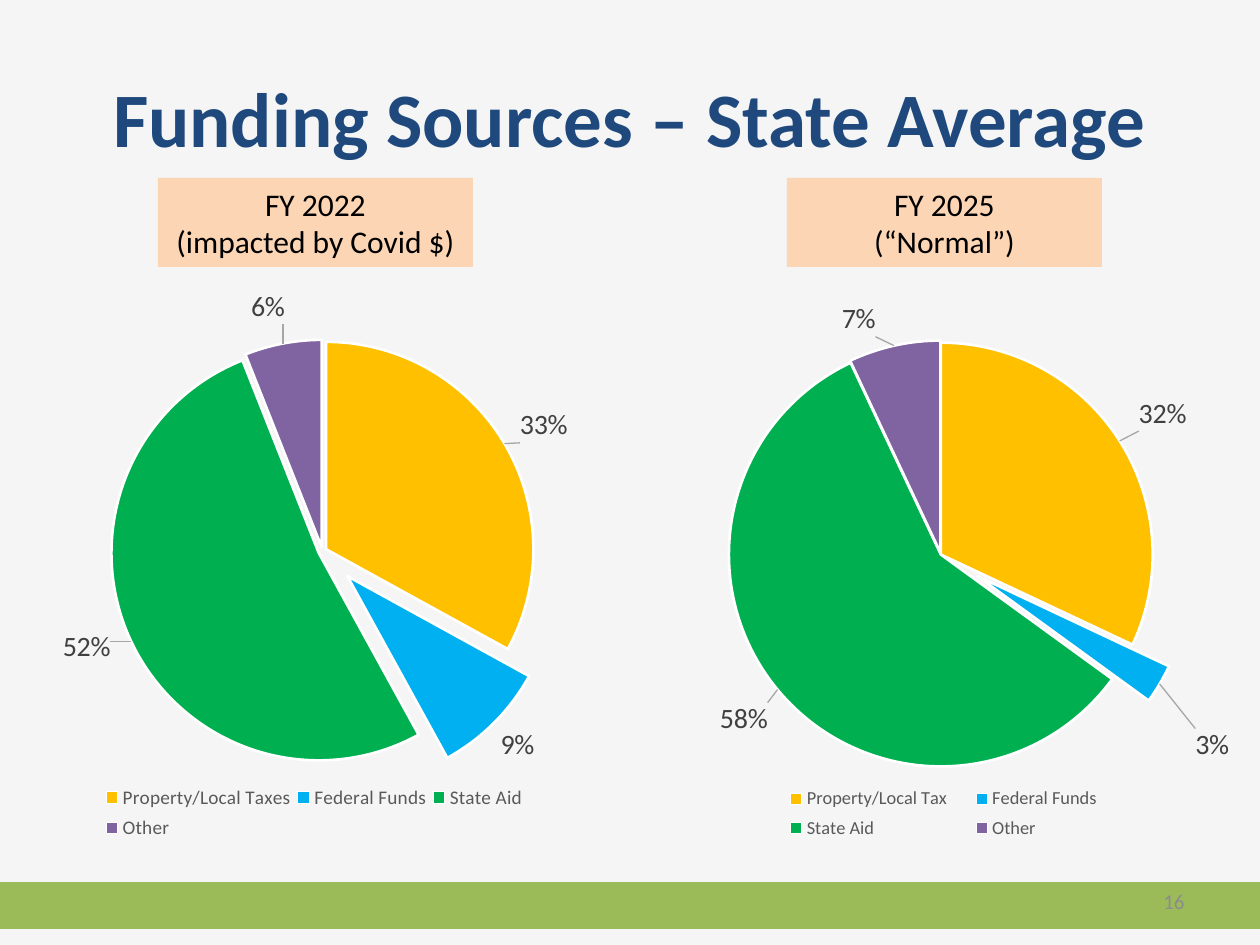
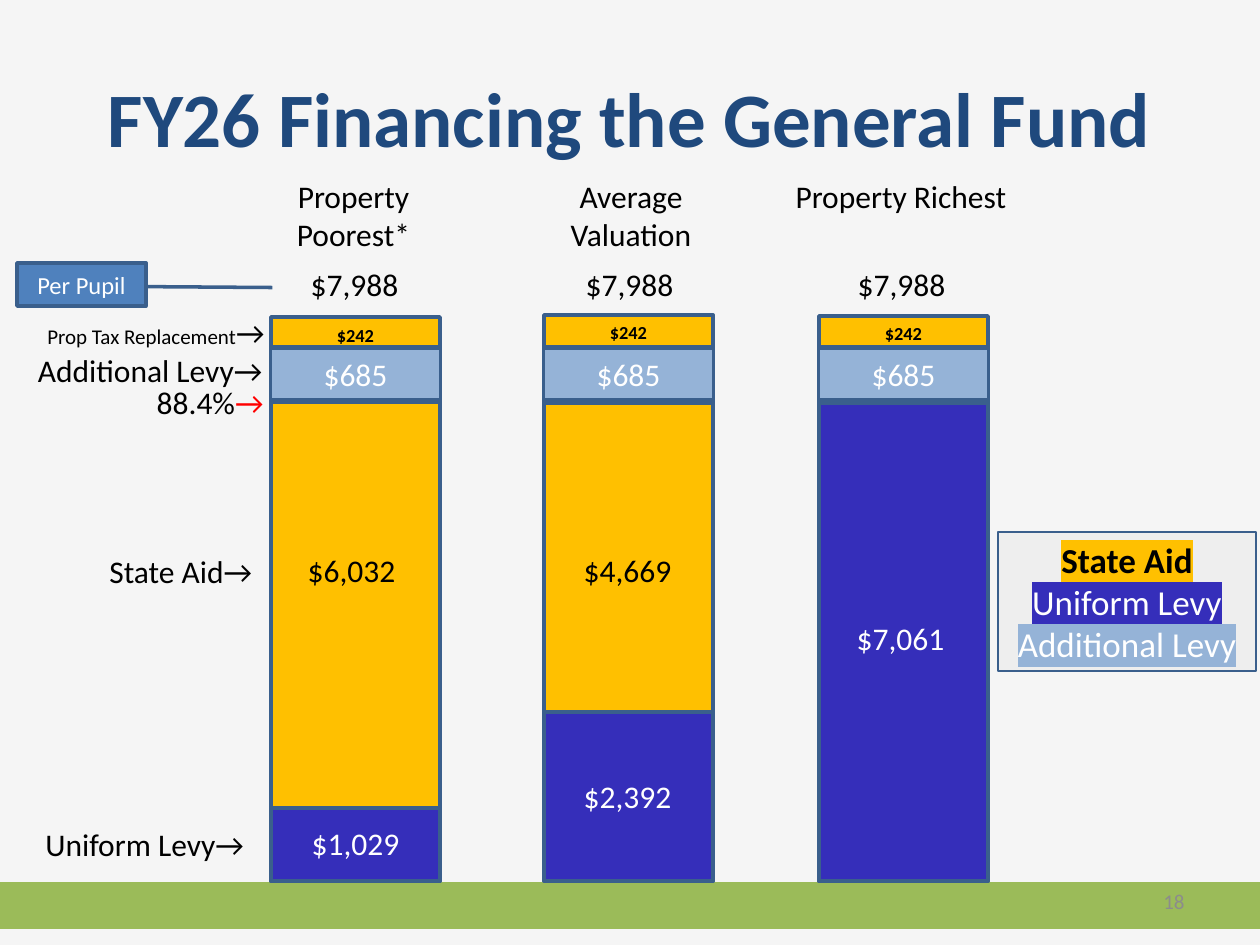
from lxml import etree
from pptx import Presentation
from pptx import util as u
from pptx.chart.data import CategoryChartData
from pptx.dml.color import RGBColor
from pptx.enum import chart as charts, shapes, text
from pptx.oxml.ns import qn

PX = u.Inches(1) / 126
FONT = "Calibri"
color = RGBColor.from_string
BACKGROUND, BAND, TITLE, PAGE_NUMBER = "F5F5F5", "9BBB59", "1F497D", "8C8C8C"
BLACK, WHITE, RED, PEACH = "000000", "FFFFFF", "FF0000", "FCD5B5"
GOLD, INDIGO, LIGHT_BLUE, NAVY, OUTLINE = "FFC000", "352EBA", "95B3D7", "25408F", "3A5F8C"
LEFT, CENTER, RIGHT = text.PP_ALIGN.LEFT, text.PP_ALIGN.CENTER, text.PP_ALIGN.RIGHT


def add_box(slide, area, words="", size=18, font_color=BLACK, bold=False, fill=None,
            line=None, line_width=2, align=CENTER, kind=shapes.MSO_SHAPE.RECTANGLE):
    """Add a shape at a px area (left, top, width, height); each line of words is a paragraph."""
    shape = slide.shapes.add_shape(kind, *[round(v * PX) for v in area])
    shape.shadow.inherit = False
    if fill:
        shape.fill.solid()
        shape.fill.fore_color.rgb = color(fill)
    else:
        shape.fill.background()
    if line:
        shape.line.color.rgb = color(line)
        shape.line.width = u.Pt(line_width)
    else:
        shape.line.fill.background()
    frame = shape.text_frame
    frame.word_wrap = True
    frame.vertical_anchor = text.MSO_ANCHOR.MIDDLE
    frame.text = words
    for paragraph in frame.paragraphs:
        paragraph.alignment = align
        for run in paragraph.runs:
            run.font.name = FONT
            run.font.size = u.Pt(size)
            run.font.bold = bold
            run.font.color.rgb = color(font_color)
    return shape


def set_layout(parent, index, **values):
    """Give a chart element a manual layout as its child number index."""
    for old in parent.findall(qn("c:layout")):
        parent.remove(old)
    layout = etree.Element(qn("c:layout"))
    manual = etree.SubElement(layout, qn("c:manualLayout"))
    for name, value in values.items():
        etree.SubElement(manual, qn("c:" + name)).set("val", str(value))
    parent.insert(index, layout)


presentation = Presentation()
presentation.slide_width = round(1260 * PX)
presentation.slide_height = round(945 * PX)

# What the slides share
slides = []
for title, number in [("Funding Sources – State Average", "16"),
                      ("FY26 Financing the General Fund", "18")]:
    slide = presentation.slides.add_slide(presentation.slide_layouts[6])
    slide.background.fill.solid()
    slide.background.fill.fore_color.rgb = color(BACKGROUND)
    add_box(slide, (0, 882, 1260, 47), fill=BAND)
    add_box(slide, (63, 38, 1134, 157), title, 44, TITLE, bold=True)
    add_box(slide, (903, 876, 294, 50), number, 12, PAGE_NUMBER, align=RIGHT)
    slides.append(slide)
funding, financing = slides

# Funding sources: one pie a year. Label moves are px from the default place.
pies = [
    dict(heading="FY 2022\n(impacted by Covid $)", heading_left=158, area=(0, 267, 640, 592),
         first="Property/Local Taxes", values=(33, 9, 52, 6), percent=True,
         explosions=(2, 17, 2, 2), moves=((9, 3), (1, 0), (-14, -14), (3, -12)),
         plot=(115, 344, 415), legend=(99, 779, 430, 68), legend_size=11),
    dict(heading="FY 2025\n(“Normal”)", heading_left=787, area=(640, 267, 609, 592),
         first="Property/Local Tax", values=(0.32, 0.03, 0.58, 0.07), percent=False,
         explosions=(0, 20, 0, 1), moves=((13, -6), (29, 41), (-4, 8), (-17, -2)),
         plot=(729, 343, 424), legend=(768, 781, 352, 66), legend_size=10.5),
]
for pie in pies:
    left, top, width, height = pie["area"]
    data = CategoryChartData()
    data.categories = [pie["first"], "Federal Funds", "State Aid", "Other"]
    data.add_series("Series 1", pie["values"])
    chart = funding.shapes.add_chart(charts.XL_CHART_TYPE.PIE,
                                     *[round(v * PX) for v in pie["area"]], data).chart
    chart.has_title = False
    chart.font.name = FONT
    chart.font.size = u.Pt(10)
    plot = chart.plots[0]
    plot.vary_by_categories = True
    series = plot.series[0]
    labels = series.data_labels
    labels.number_format = "0%"
    labels.number_format_is_linked = False
    fonts = [labels.font]
    for index, fill in enumerate((GOLD, "00B0F0", "00B050", "8064A2")):
        point = series.points[index]
        point.format.fill.solid()
        point.format.fill.fore_color.rgb = color(fill)
        point.format.line.color.rgb = color(WHITE)
        point.format.line.width = u.Pt(1.5)
        point.data_label.position = charts.XL_LABEL_POSITION.OUTSIDE_END
        fonts.append(point.data_label.font)
    for font in fonts:
        font.name = FONT
        font.size = u.Pt(16)
        font.color.rgb = color("404040")

    for point, explosion in zip(chart.element.iter(qn("c:dPt")), pie["explosions"]):
        element = etree.Element(qn("c:explosion"), val=str(explosion))
        point.find(qn("c:spPr")).addprevious(element)
    for label, (x, y) in zip(chart.element.iter(qn("c:dLbl")), pie["moves"]):
        set_layout(label, 1, x=round(x / width, 3), y=round(y / height, 3))
        label.insert(2, etree.Element(qn("c:numFmt"), formatCode="0%", sourceLinked="0"))
    for name, shown in (("c:showVal", not pie["percent"]), ("c:showPercent", pie["percent"])):
        for element in chart.element.iter(qn(name)):
            element.set("val", str(int(shown)))
    all_labels = next(chart.element.iter(qn("c:dLbls")))
    if all_labels.find(qn("c:showLeaderLines")) is None:
        etree.SubElement(all_labels, qn("c:showLeaderLines"))
    all_labels.find(qn("c:showLeaderLines")).set("val", "1")
    leader = etree.SubElement(all_labels, qn("c:leaderLines"))
    stroke = etree.SubElement(etree.SubElement(leader, qn("c:spPr")), qn("a:ln"), w="9525")
    fill = etree.SubElement(stroke, qn("a:solidFill"))
    etree.SubElement(fill, qn("a:srgbClr"), val="A6A6A6")

    chart.has_legend = True
    chart.legend.position = charts.XL_LEGEND_POSITION.BOTTOM
    chart.legend.include_in_layout = False
    chart.legend.font.name = FONT
    chart.legend.font.size = u.Pt(pie["legend_size"])
    chart.legend.font.color.rgb = color("595959")
    plot_left, plot_top, side = pie["plot"]
    for name, index, extra, (x, y, w, h) in (
            ("c:plotArea", 0, {"layoutTarget": "inner"}, (plot_left, plot_top, side, side)),
            ("c:legend", 1, {}, pie["legend"])):
        set_layout(next(chart.element.iter(qn(name))), index, **extra,
                   xMode="edge", yMode="edge",
                   x=round((x - left) / width, 3), y=round((y - top) / height, 3),
                   w=round(w / width, 3), h=round(h / height, 3))
    add_box(funding, (pie["heading_left"], 178, 315, 89), pie["heading"], fill=PEACH)

# Financing the general fund: three stacked bars, segments listed from the bottom up
BAR_WIDTH, BAR_BOTTOM = 169, 881
bars = [
    (271, "Property Poorest*", (245, 217), 317, 36, 270,
     [(INDIGO, 808, "$1,029", (271, 818), WHITE), (GOLD, 402, "$6,032", (267, 545), BLACK)]),
    (544, "Average Valuation", (513, 236), 315, 34, 545,
     [(INDIGO, 712, "$2,392", (543, 771), WHITE), (GOLD, 403, "$4,669", (543, 545), BLACK)]),
    (819, "Property Richest", (783, 236), 316, 35, 817,
     [(INDIGO, 403, "$7,061", (816, 613), WHITE)]),
]
for left, heading, heading_span, top, cap_height, total_left, segments in bars:
    add_box(financing, (left, top, BAR_WIDTH, cap_height), "$242", 10.5, bold=True, fill=GOLD)
    bottom = BAR_BOTTOM
    for fill, segment_top, amount, amount_place, font_color in segments:
        add_box(financing, (left, segment_top, BAR_WIDTH, bottom - segment_top),
                fill=fill, line=OUTLINE)
        add_box(financing, (*amount_place, BAR_WIDTH, 50), amount, font_color=font_color)
        bottom = segment_top
    add_box(financing, (left, 347, BAR_WIDTH, 55), fill=NAVY, line=OUTLINE)
    add_box(financing, (left, top, BAR_WIDTH, BAR_BOTTOM - top), line=OUTLINE)
    add_box(financing, (left, 349, BAR_WIDTH, 50), "$685", font_color=WHITE,
            fill=LIGHT_BLUE, line=OUTLINE, line_width=1.5)
    add_box(financing, (total_left, 259, BAR_WIDTH, 50), "$7,988")
    heading_left, heading_width = heading_span
    box = add_box(financing, (heading_left, 171, heading_width, 89), heading)
    box.text_frame.vertical_anchor = text.MSO_ANCHOR.TOP

# Row names, each ending in an arrow
for words, area, size, align, arrow_color in [
        ("Prop Tax Replacement", (-4, 307, 281, 50), 12, RIGHT, BLACK),
        ("Additional Levy", (-6, 345, 281, 50), 18, RIGHT, BLACK),
        ("88.4%", (-5, 377, 281, 50), 18, RIGHT, RED),
        ("State Aid", (97, 546, 203, 50), 18, LEFT, BLACK),
        ("Uniform Levy", (33, 819, 267, 50), 18, LEFT, BLACK)]:
    box = add_box(financing, area, words, size, align=align)
    arrow = box.text_frame.paragraphs[0].add_run()
    arrow.text = "→"
    arrow.font.name = FONT
    arrow.font.size = u.Pt(18)
    arrow.font.color.rgb = color(arrow_color)

callout = add_box(financing, (17, 263, 129, 43), "Per Pupil", 14, WHITE, fill="4F81BD",
                  line=OUTLINE, kind=shapes.MSO_SHAPE.LINE_CALLOUT_1)
for index, value in enumerate((0.57, 1.98, 0.55, 1.01)):
    callout.adjustments[index] = value

key = add_box(financing, (998, 532, 258, 139), "State Aid\nUniform Levy\nAdditional Levy", 20,
              WHITE, fill="EEEEEE", line=OUTLINE, line_width=0.75)
state_aid = key.text_frame.paragraphs[0].runs[0].font
state_aid.bold = True
state_aid.color.rgb = color(BLACK)
for properties, fill in zip(key.element.iter(qn("a:rPr")), (GOLD, INDIGO, LIGHT_BLUE)):
    highlight = etree.Element(qn("a:highlight"))
    etree.SubElement(highlight, qn("a:srgbClr"), val=fill)
    properties.find(qn("a:solidFill")).addnext(highlight)

presentation.save("out.pptx")
